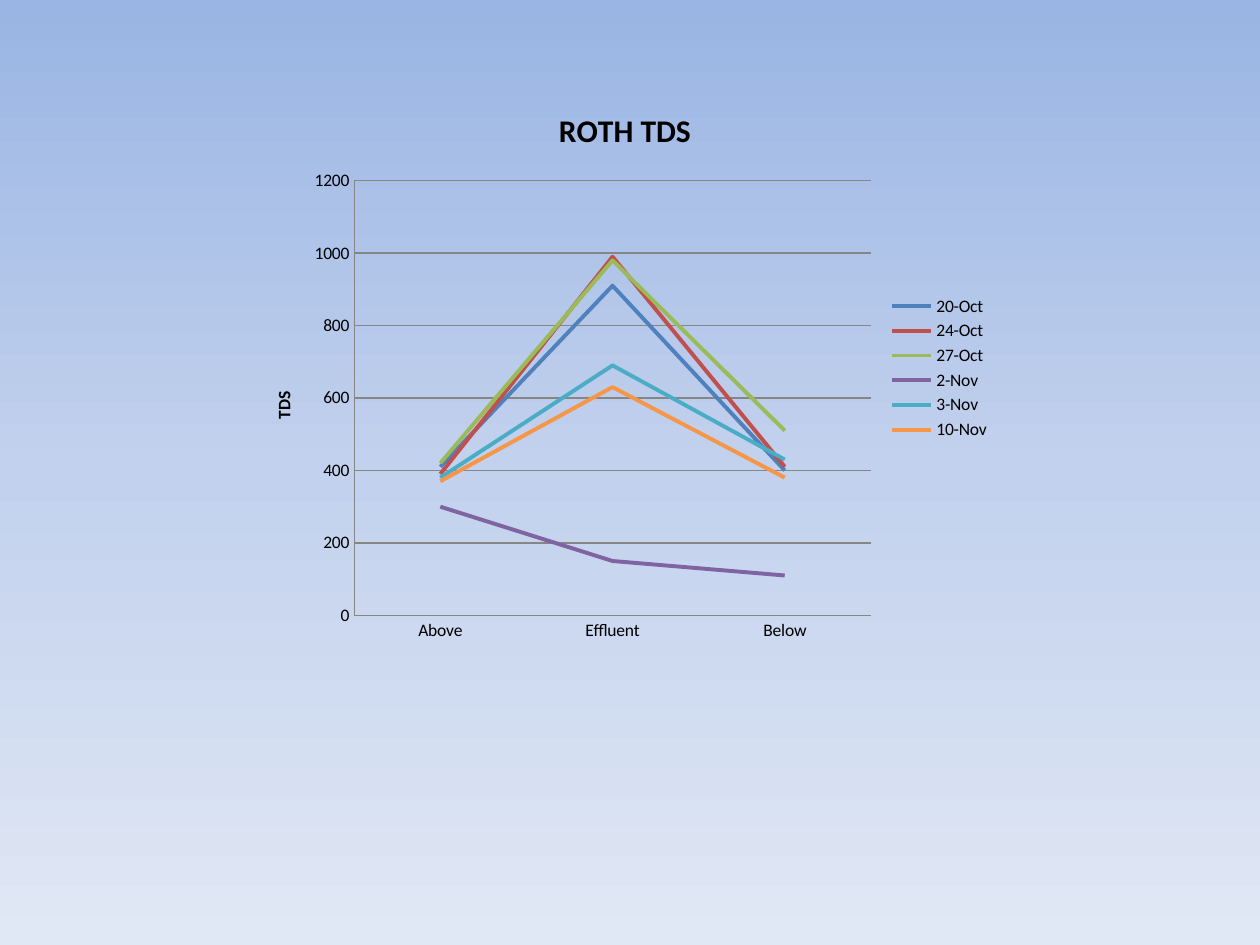
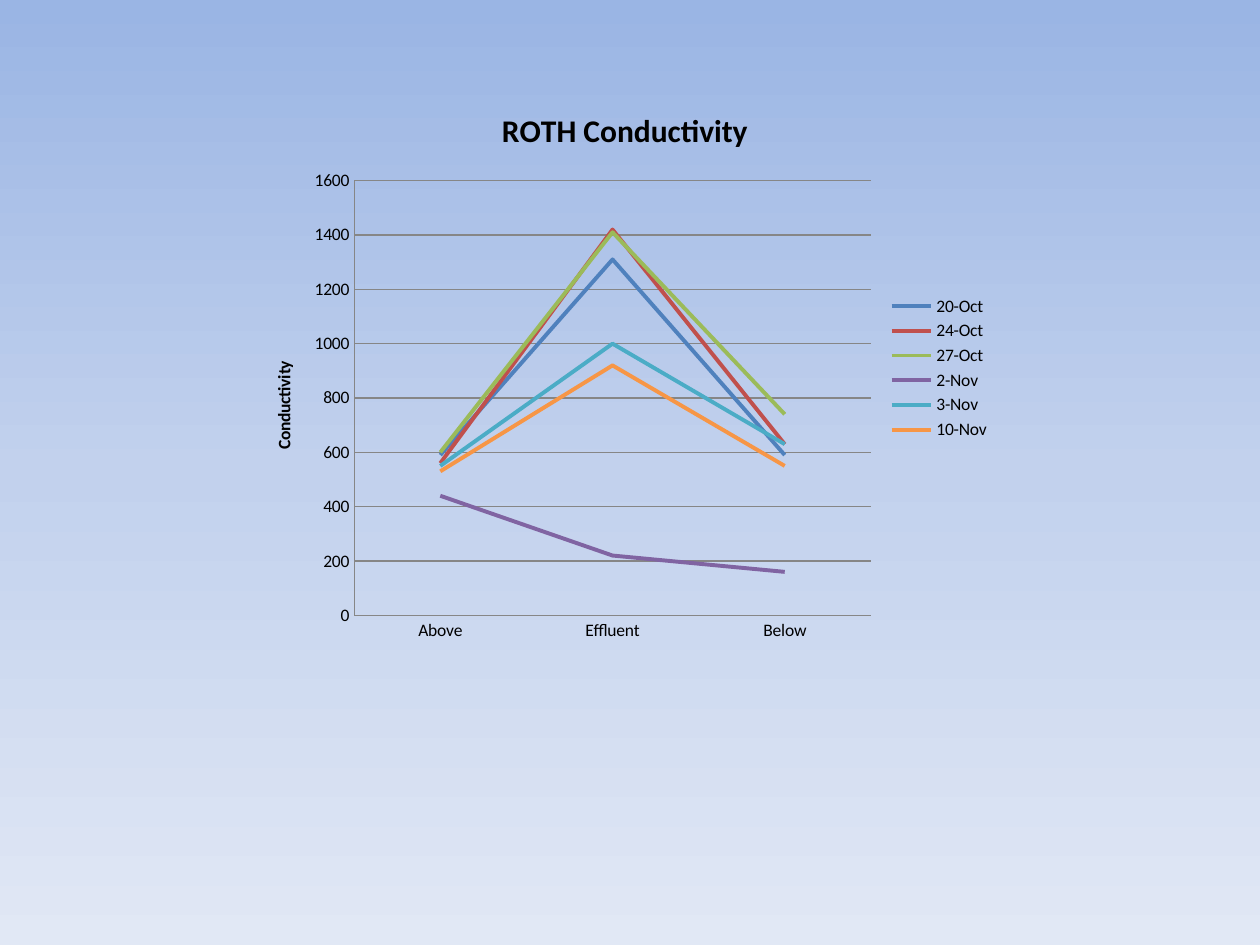
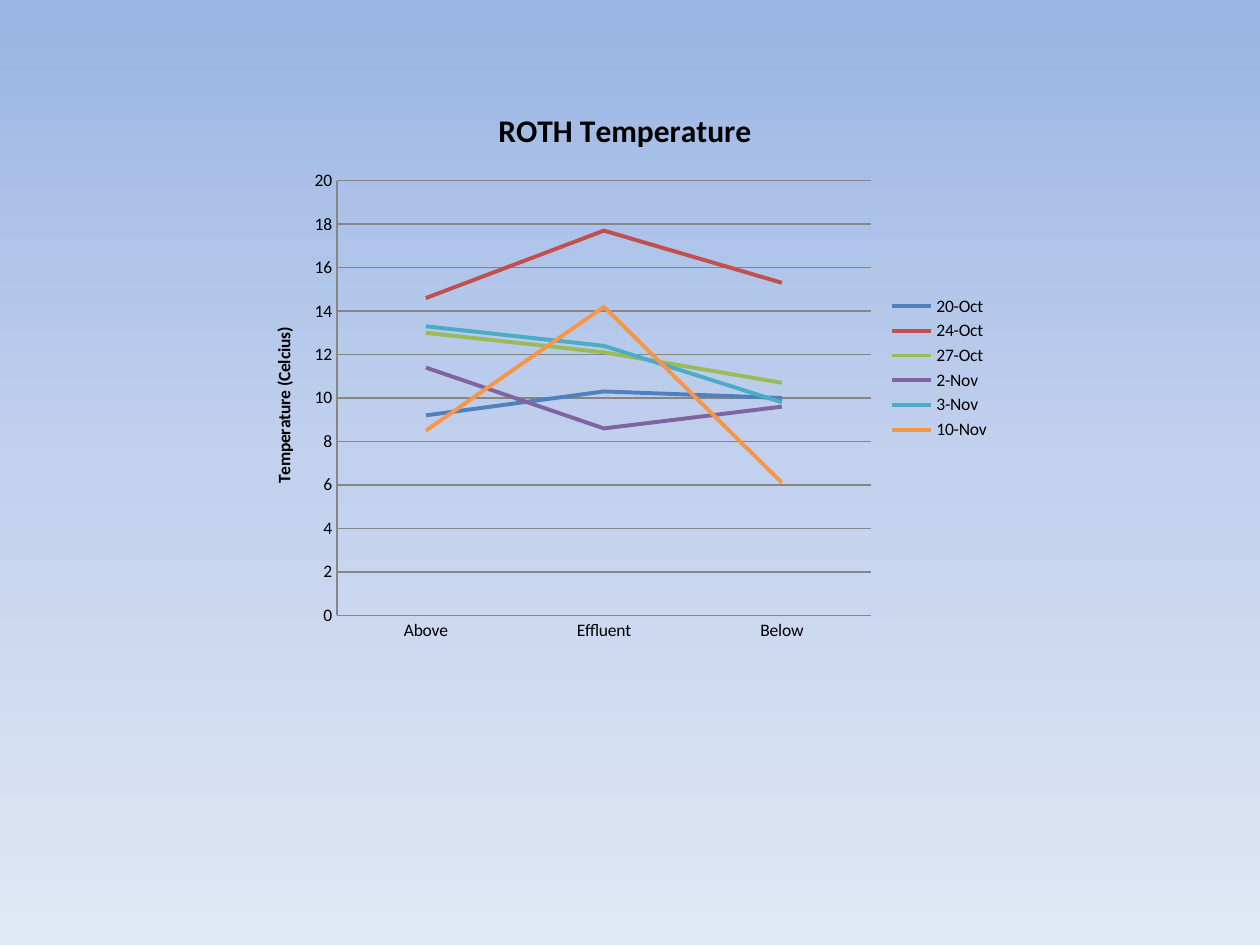
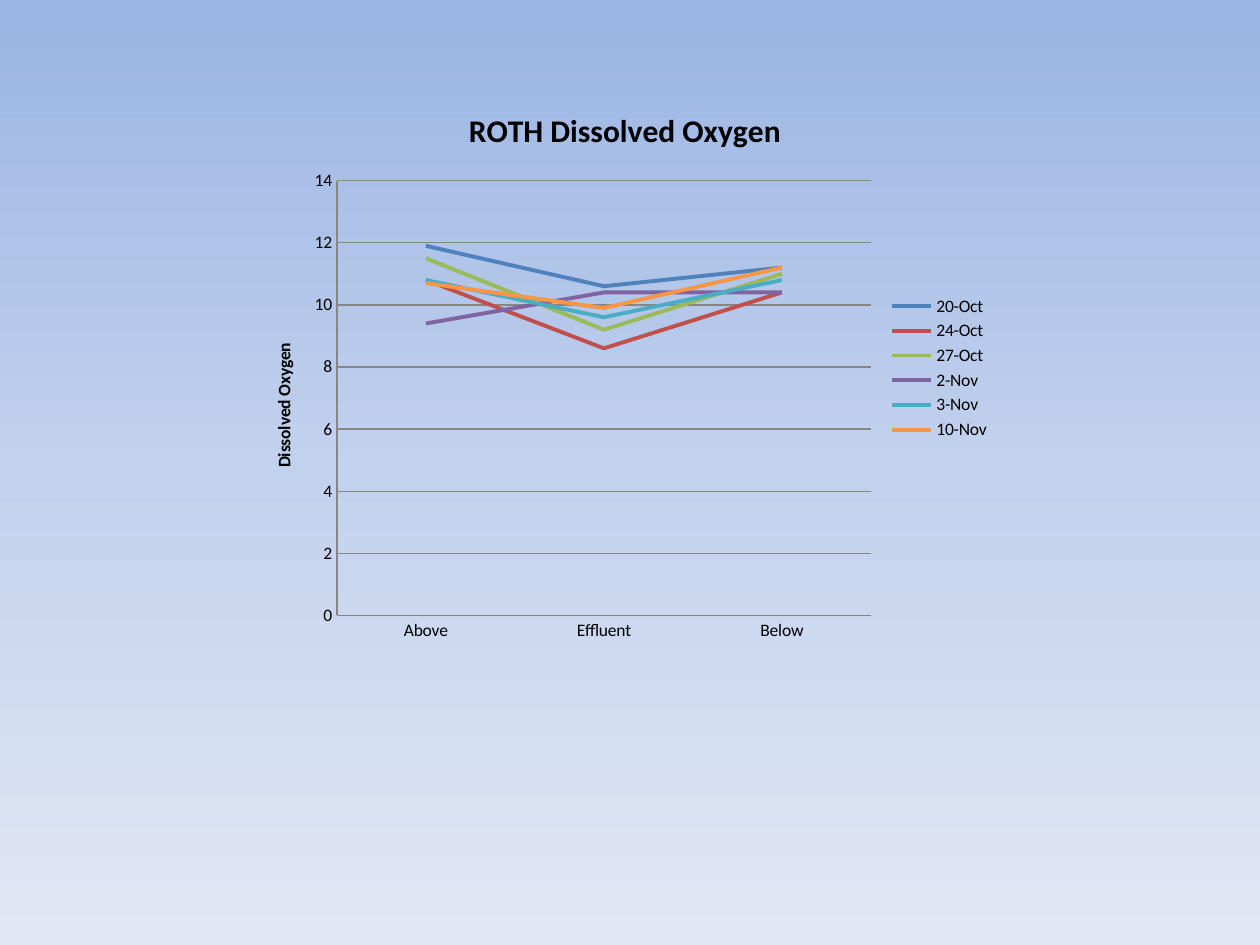
"""Build four line-chart slides of ROTH water quality readings."""
from copy import deepcopy
from dataclasses import dataclass

from pptx import Presentation
from pptx.chart.data import CategoryChartData
from pptx.dml.color import RGBColor
from pptx.enum.chart import XL_CHART_TYPE, XL_LEGEND_POSITION, XL_TICK_MARK
from pptx.oxml.ns import qn
from pptx.util import Inches, Pt


@dataclass(frozen=True)
class Theme:
    font: str = "Calibri"
    text: str = "000000"
    axis: str = "868686"
    background: tuple = ("9AB5E4", "C2D1ED", "E1E8F5")
    series: tuple = ("4F81BD", "C0504D", "9BBB59", "8064A2", "4BACC6", "F79646")
    title_size: int = 18
    body_size: int = 10
    axis_width: float = 0.75
    series_width: float = 2.25


THEME = Theme()
SITES = ("Above", "Effluent", "Below")
DATES = ("20-Oct", "24-Oct", "27-Oct", "2-Nov", "3-Nov", "10-Nov")
MEASUREMENTS = (
    ("ROTH TDS", "TDS", (
        (410, 910, 400), (390, 990, 410), (420, 980, 510),
        (300, 150, 110), (380, 690, 430), (370, 630, 380))),
    ("ROTH Conductivity", "Conductivity", (
        (590, 1310, 590), (560, 1420, 630), (600, 1410, 740),
        (440, 220, 160), (550, 1000, 630), (530, 920, 550))),
    ("ROTH Temperature", "Temperature (Celcius)", (
        (9.2, 10.3, 10), (14.6, 17.7, 15.3), (13, 12.1, 10.7),
        (11.4, 8.6, 9.6), (13.3, 12.4, 9.8), (8.5, 14.2, 6.1))),
    ("ROTH Dissolved Oxygen", "Dissolved Oxygen", (
        (11.9, 10.6, 11.2), (10.8, 8.6, 10.4), (11.5, 9.2, 11),
        (9.4, 10.4, 10.4), (10.8, 9.6, 10.8), (10.7, 9.9, 11.2))),
)


def style_line(line, color, width):
    line.color.rgb = RGBColor.from_string(color)
    line.width = Pt(width)


def write_title(frame, text, size):
    span = frame.paragraphs[0].add_run()
    span.text = text
    span.font.name = THEME.font
    span.font.size = Pt(size)
    span.font.bold = True
    span.font.color.rgb = RGBColor.from_string(THEME.text)


deck = Presentation()
deck.slide_width = Inches(10)
deck.slide_height = Inches(7.5)

master = deck.slide_master
backdrop = master.background.fill
backdrop.gradient()
backdrop.gradient_angle = 270
stop_list = next(master.element.iter(qn("a:gsLst")))
stop_list.insert(1, deepcopy(stop_list[0]))
for index, (stop, color) in enumerate(zip(backdrop.gradient_stops, THEME.background)):
    stop.position = index / 2
    stop.color.rgb = RGBColor.from_string(color)

for title, unit, readings in MEASUREMENTS:
    slide = deck.slides.add_slide(deck.slide_layouts[6])
    chart_data = CategoryChartData()
    chart_data.categories = SITES
    for date, values in zip(DATES, readings):
        chart_data.add_series(date, values)
    chart = slide.shapes.add_chart(
        XL_CHART_TYPE.LINE, Inches(1.96), Inches(0.67), Inches(6), Inches(4.5), chart_data
    ).chart

    chart.font.name = THEME.font
    chart.font.size = Pt(THEME.body_size)
    chart.font.color.rgb = RGBColor.from_string(THEME.text)
    chart.has_title = True
    write_title(chart.chart_title.text_frame, title, THEME.title_size)
    chart.chart_title.include_in_layout = False
    chart.has_legend = True
    chart.legend.position = XL_LEGEND_POSITION.RIGHT
    chart.legend.include_in_layout = False

    for axis in (chart.category_axis, chart.value_axis):
        axis.major_tick_mark = XL_TICK_MARK.NONE
        axis.minor_tick_mark = XL_TICK_MARK.NONE
        style_line(axis.format.line, THEME.axis, THEME.axis_width)
    value_axis = chart.value_axis
    value_axis.has_major_gridlines = True
    style_line(value_axis.major_gridlines.format.line, THEME.axis, THEME.axis_width)
    write_title(value_axis.axis_title.text_frame, unit, THEME.body_size)

    plot = chart.plots[0]
    plot.vary_by_categories = False
    for series, color in zip(plot.series, THEME.series):
        series.smooth = False
        style_line(series.format.line, color, THEME.series_width)

deck.save("out.pptx")
